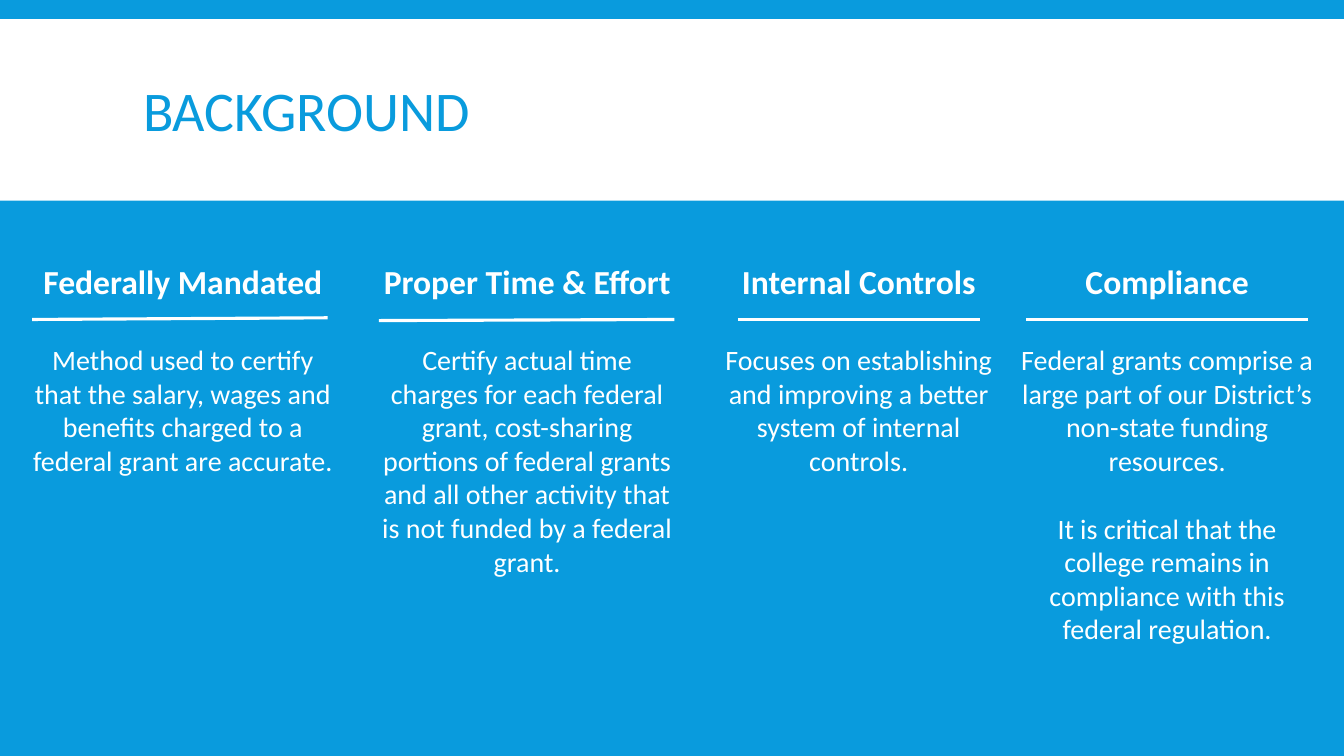
"""Build the Background slide: a title band above four columns."""
from dataclasses import dataclass

from pptx import Presentation
from pptx.dml.color import RGBColor
from pptx.enum import shapes, text
from pptx.oxml import ns, xmlchemy as xml
from pptx.util import Pt


@dataclass(frozen=True)
class Theme:
    """Colours, font and type sizes."""
    blue: RGBColor = RGBColor(0x09, 0x9B, 0xDD)
    white: RGBColor = RGBColor(0xFF, 0xFF, 0xFF)
    face: str = "Calibri"
    title: int = 40
    head: int = 24
    body: int = 20
    rule: float = 2.25


THEME = Theme()
TOP = 183
COLUMNS = [
    ((15.1, 231, 230), (23, 228.2, 234, 227), "Federally Mandated", [
        "Method used to certify that the salary, wages and benefits charged "
        "to a federal grant are accurate."]),
    ((262.8, 227.5, 257), (270.7, 229, 481.7, 228.2), "Proper Time & Effort", [
        "Certify actual time charges for each federal grant, cost-sharing "
        "portions of federal grants and all other activity that is not "
        "funded by a federal grant."]),
    ((509, 208.8, 230), (527, 228.2, 699.8, 228.2), "Internal Controls", [
        "Focuses on establishing and improving a better system of internal "
        "controls."]),
    ((717.8, 231.8, 349), (733, 228.2, 934.6, 228.2), "Compliance", [
        "Federal grants comprise a large part of our District’s non-state "
        "funding resources.",
        "It is critical that the college remains in compliance with this "
        "federal regulation."]),
]


def style(para, size, color, bold=False):
    """Set the font of a whole paragraph."""
    font = para.font
    font.name, font.size, font.bold = THEME.face, Pt(size), bold
    font.color.rgb = color


def add_band(slide):
    """Add the white band behind the title."""
    band = slide.shapes.add_shape(
        shapes.MSO_SHAPE.RECTANGLE, 0, Pt(13.7), Pt(960), Pt(129.6))
    band.shadow.inherit = False
    band.fill.solid()
    band.fill.fore_color.rgb = THEME.white
    band.line.fill.background()
    slide.shapes.title.element.addprevious(band.element)


def set_title(slide, words):
    """Place and format the title."""
    title = slide.shapes.title
    title.left, title.top = Pt(95), Pt(22.3)
    title.width, title.height = Pt(770.4), Pt(118.8)
    frame = title.text_frame
    frame.text = words
    frame.vertical_anchor = text.MSO_ANCHOR.MIDDLE
    para = frame.paragraphs[0]
    para.alignment = text.PP_ALIGN.LEFT
    para.line_spacing = 0.85
    style(para, THEME.title, THEME.blue)


def add_column(slide, box, head, body):
    """Add a bold heading with centred paragraphs below it."""
    left, width, height = map(Pt, box)
    frame = slide.shapes.add_textbox(left, Pt(TOP), width, height).text_frame
    frame.word_wrap = True
    frame.text = "\n".join([head, *body])
    gap = 0
    for para in frame.paragraphs:
        size = THEME.body if gap else THEME.head
        para.alignment = text.PP_ALIGN.CENTER
        para.space_before = Pt(gap)
        style(para, size, THEME.white, bold=not gap)
        gap = round(size * 1.22, 1)


def add_rule(slide, ends):
    """Add the white line under a heading."""
    line = slide.shapes.add_connector(
        shapes.MSO_CONNECTOR.STRAIGHT, *map(Pt, ends))
    line.line.color.rgb = THEME.white
    line.line.width = Pt(THEME.rule)
    line.element.spPr.append(xml.OxmlElement("a:effectLst"))


def main():
    """Build and save the slide."""
    deck = Presentation()
    deck.slide_width, deck.slide_height = Pt(960), Pt(540)
    slide = deck.slides.add_slide(deck.slide_layouts.get_by_name("Title Only"))
    slide.background.fill.solid()
    slide.background.fill.fore_color.rgb = THEME.blue
    add_band(slide)
    set_title(slide, "BACKGROUND")
    for box, ends, head, body in COLUMNS:
        add_column(slide, box, head, body)
        add_rule(slide, ends)
    deck.save("out.pptx")


if __name__ == "__main__":
    main()
